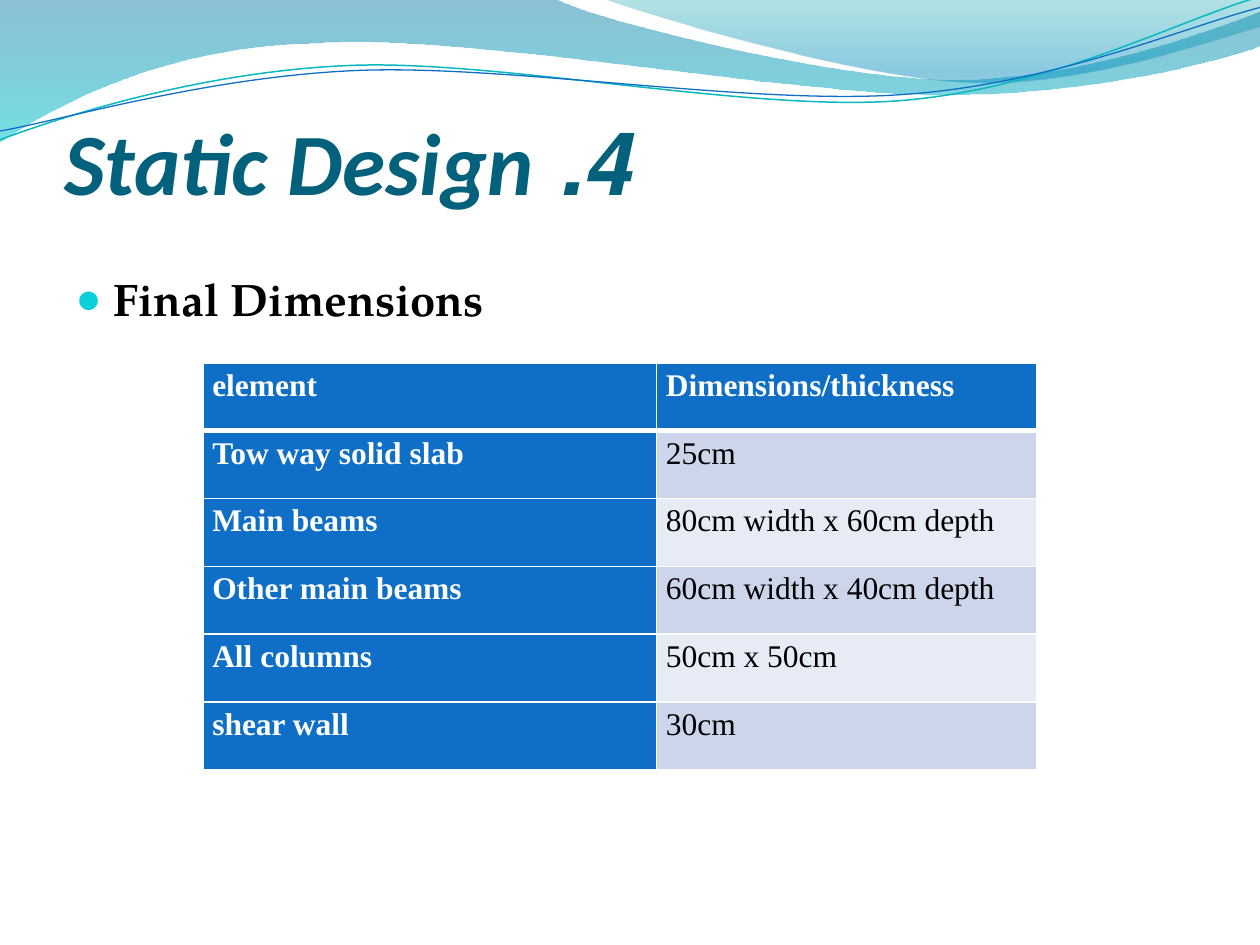
from math import cos, radians, sin

from lxml.etree import SubElement
from pptx import Presentation
from pptx.dml.color import RGBColor
from pptx.enum.text import MSO_ANCHOR, MSO_AUTO_SIZE, PP_ALIGN
from pptx.oxml import parse_xml
from pptx.oxml.ns import nsdecls, qn
from pptx.util import Inches, Pt

WIDE, HIGH = 10, 7.5
TITLE = "4. Static Design"
POINT = "Final Dimensions"
ROWS = [
    ("element", "Dimensions/thickness"),
    ("Tow way solid slab", "25cm"),
    ("Main beams", "80cm width x 60cm depth"),
    ("Other main beams", "60cm width x 40cm depth"),
    ("All columns", "50cm x 50cm"),
    ("shear wall", "30cm"),
]
COLS, TALL = (3.6, 3.02), 3.23
BLUE, WHITE, BLACK = "0F6FC6", "FFFFFF", "000000"
BANDS = ("E7EBF5", "CCD5EA")
TILT = -2.7

BLOBS = [
    ([(0, 0), (4.4, -0.01), (4.76, 0.17, 6.64, 0.63, 7.58, 0.63),
      (8.53, 0.63, 9.58, 0.26, 10, 0.09), (10.01, 0.36),
      (9.83, 0.44, 8.7, 0.76, 7.46, 0.75), (6.22, 0.75, 3.82, 0.28, 2.57, 0.34),
      (1.29, 0.36, 0.46, 0.83, -0.01, 1.13), (0, 0)],
     [(0, "0074A1", 45), (1, "00C6CF", 55)]),
    ([(4.79, -0.01), (5.09, 0.11, 6.82, 0.62, 7.69, 0.65),
      (8.56, 0.69, 9.61, 0.32, 10, 0.21), (10, 0), (4.79, -0.01)],
     [(0, "00A1A9", 30), (0.8, "008BBF", 45)]),
]
LINES = [
    ([(0, 1.11), (0.48, 0.93, 1.58, 0.57, 2.77, 0.52),
      (3.95, 0.47, 5.93, 0.89, 7.13, 0.8), (8.33, 0.71, 9.38, 0.15, 9.98, -0.02)],
     "0AB8BF", 0.85),
    ([(0, 1.04), (0.47, 0.96, 1.64, 0.61, 2.83, 0.56),
      (4.03, 0.51, 5.97, 0.84, 7.17, 0.75), (8.36, 0.67, 9.41, 0.21, 10, 0.06)],
     BLUE, 0.75),
]


def rgb(code):
    return RGBColor.from_string(code)


def place(item, left, top, wide, high):
    item.left, item.top = Inches(left), Inches(top)
    item.width, item.height = Inches(wide), Inches(high)


def write(para, text, size, font, color, bold=True, slant=False):
    run = para.add_run()
    run.text = text
    face = run.font
    face.size, face.name = Pt(size), font
    face.bold, face.italic = bold, slant
    face.color.rgb = rgb(color)


def turn(x, y, angle):
    a = radians(angle)
    return x * cos(a) - y * sin(a), x * sin(a) + y * cos(a)


def bend(shape, steps):
    pairs = list(shape._element.iter(qn("a:lnTo")))
    for step in steps[1:]:
        first, *rest = pairs[:len(step) // 2]
        pairs = pairs[len(step) // 2:]
        if rest:
            curve = first.makeelement(qn("a:cubicBezTo"))
            first.addprevious(curve)
            for node in (first, *rest):
                curve.append(node[0])
                node.getparent().remove(node)


def wave(slide, steps, level, close, tilt=0):
    dots = [turn(*step[i:i + 2], -tilt) for step in steps for i in range(0, len(step), 2)]
    dots = [(Inches(x), Inches(y)) for x, y in dots]
    pen = slide.shapes.build_freeform(*dots[0])
    pen.add_line_segments(dots[1:], close=close)
    shape = pen.convert_to_shape()
    bend(shape, steps)
    half, rise = shape.width / 2, shape.height / 2
    x, y = turn(shape.left + half, shape.top + rise, tilt)
    shape.left, shape.top = round(x - half), round(y - rise)
    shape.rotation = tilt
    shape.shadow.inherit = False
    slide.shapes._spTree.insert(2 + level, shape._element)
    return shape


def waves(slide):
    for level, (steps, stops) in enumerate(BLOBS):
        shape = wave(slide, steps, level, True)
        shape.line.fill.background()
        shape.fill.gradient()
        shape.fill.gradient_angle = 270
        for stop, (spot, color, _) in zip(shape.fill.gradient_stops, stops):
            stop.position, stop.color.rgb = spot, rgb(color)
        tints = shape._element.spPr.iter(qn("a:srgbClr"))
        for tint, (_, _, alpha) in zip(tints, stops):
            SubElement(tint, qn("a:alpha"), val=str(alpha * 1000))
    for level, (steps, color, width) in enumerate(LINES, len(BLOBS)):
        shape = wave(slide, steps, level, False, TILT)
        shape.fill.background()
        shape.line.color.rgb, shape.line.width = rgb(color), Pt(width)


def heading(title):
    place(title, 0.51, 0.44, 0.9 * WIDE, HIGH / 6)
    frame = title.text_frame
    frame.auto_size, frame.vertical_anchor = MSO_AUTO_SIZE.NONE, MSO_ANCHOR.BOTTOM
    frame.margin_left = frame.margin_right = frame.margin_bottom = 0
    para = frame.paragraphs[0]
    para.alignment = PP_ALIGN.LEFT
    para._p.get_or_add_pPr().set("rtl", "1")
    write(para, TITLE, 50, "Calibri", "04617B", slant=True)


def bullet(body):
    place(body, 0.05 * WIDE, 0.28 * HIGH, 0.9 * WIDE, 0.64 * HIGH)
    body.text_frame.auto_size = MSO_AUTO_SIZE.NONE
    para = body.text_frame.paragraphs[0]
    props = para._p.get_or_add_pPr()
    props.set("marL", str(Inches(0.3)))
    props.set("indent", str(-Inches(0.3)))
    SubElement(SubElement(props, qn("a:buClr")), qn("a:srgbClr"), val="0BD0D9")
    SubElement(props, qn("a:buSzPct"), val="95000")
    SubElement(props, qn("a:buChar"), char="●")
    write(para, POINT, 26, "TeX Gyre Pagella", BLACK)


def border(cell, row):
    sides = {"L": 1, "R": 1, "T": 3 if row == 1 else 1, "B": 3 if row == 0 else 1}
    props = cell._tc.get_or_add_tcPr()
    for i, (side, width) in enumerate(sides.items()):
        props.insert(i, parse_xml(
            f'<a:ln{side} {nsdecls("a")} w="{Pt(width)}"><a:solidFill>'
            f'<a:srgbClr val="{WHITE}"/></a:solidFill></a:ln{side}>'))


def grid(slide):
    area = [Inches(n) for n in (1.61, 2.88, sum(COLS), TALL)]
    table = slide.shapes.add_table(len(ROWS), len(COLS), *area).table
    for col, wide in zip(table.columns, COLS):
        col.width = Inches(wide)
    for r, texts in enumerate(ROWS):
        for c, text in enumerate(texts):
            cell = table.cell(r, c)
            head = r == 0 or c == 0
            cell.fill.solid()
            cell.fill.fore_color.rgb = rgb(BLUE if head else BANDS[r % 2])
            cell.margin_left = cell.margin_right = Pt(5.4)
            cell.margin_top = cell.margin_bottom = 0
            border(cell, r)
            para = cell.text_frame.paragraphs[0]
            para.line_spacing = 1.15
            write(para, text, 18, "Times New Roman", WHITE if head else BLACK, head)


def main():
    deck = Presentation()
    deck.slide_width, deck.slide_height = Inches(WIDE), Inches(HIGH)
    slide = deck.slides.add_slide(deck.slide_layouts[1])
    waves(slide)
    heading(slide.shapes.title)
    bullet(slide.placeholders[1])
    grid(slide)
    deck.save("out.pptx")


if __name__ == "__main__":
    main()
